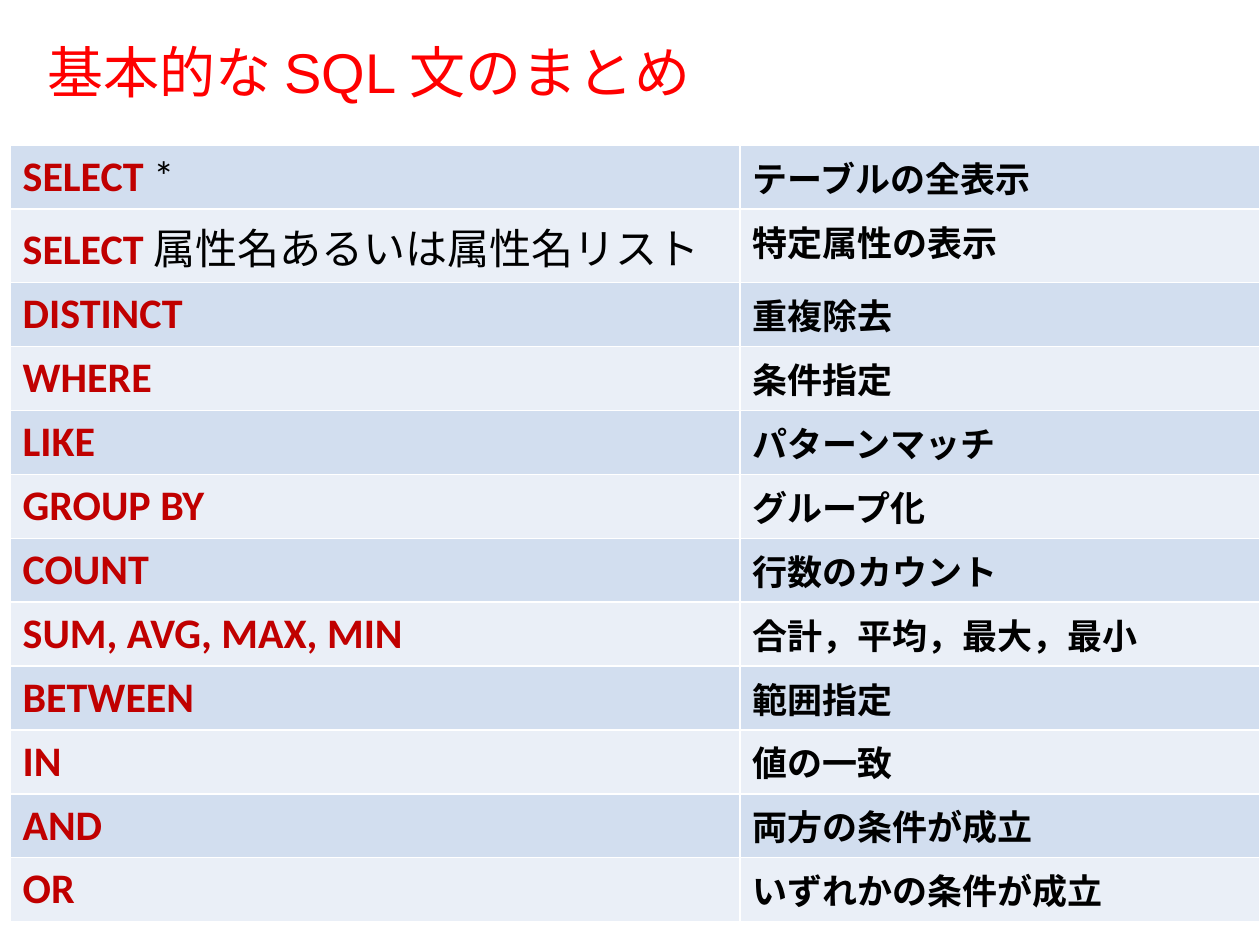
import dataclasses

import pptx
import pptx.dml.color
import pptx.enum.lang
import pptx.enum.text
import pptx.oxml
import pptx.oxml.ns
import pptx.util


@dataclasses.dataclass(frozen=True)
class Theme:
    """Colours, fonts and type sizes of the slide."""
    title: str = "FF0000"
    keyword: str = "C00000"
    text: str = "000000"
    border: str = "FFFFFF"
    bands: tuple = ("D2DEEF", "EAEFF7")
    title_font: str = "Arial"
    table_font: str = "Calibri"
    title_size: float = 32
    keyword_size: float = 24
    meaning_size: float = 20


THEME = Theme()
TITLE = "基本的な SQL 文のまとめ"
COLUMN_WIDTHS = (417, 297)
ROW_HEIGHT = 36.5
STATEMENTS = (
    ("SELECT", " *", "テーブルの全表示"),
    ("SELECT ", "属性名あるいは属性名リスト", "特定属性の表示"),
    ("DISTINCT", "", "重複除去"),
    ("WHERE", "", "条件指定"),
    ("LIKE", "", "パターンマッチ"),
    ("GROUP BY", "", "グループ化"),
    ("COUNT", "", "行数のカウント"),
    ("SUM, AVG, MAX, MIN", "", "合計，平均，最大，最小"),
    ("BETWEEN", "", "範囲指定"),
    ("IN", "", "値の一致"),
    ("AND", "", "両方の条件が成立"),
    ("OR", "", "いずれかの条件が成立"),
)


def set_values(target, values):
    """Set each named attribute on the target."""
    for name, value in values.items():
        setattr(target, name, value)


def add_span(para, text, font, size, color, bold=False):
    """Append one formatted run to a paragraph."""
    span = para.add_run()
    span.text = text
    set_values(span.font, {
        "name": font,
        "size": pptx.util.Pt(size),
        "bold": bold,
        "language_id": pptx.enum.lang.MSO_LANGUAGE_ID.JAPANESE,
    })
    span.font.color.rgb = pptx.dml.color.RGBColor.from_string(color)


def add_title(page):
    """Add the slide heading."""
    box = page.shapes.add_textbox(*map(pptx.util.Pt, (20, 11, 666, 64)))
    set_values(box.text_frame, {
        "word_wrap": True,
        "vertical_anchor": pptx.enum.text.MSO_ANCHOR.MIDDLE,
    })
    para = box.text_frame.paragraphs[0]
    para.line_spacing = 0.9
    add_span(para, TITLE, THEME.title_font, THEME.title_size, THEME.title)


def paint_cell(cell, color):
    """Give a cell thin borders and a solid fill."""
    properties = cell._tc.get_or_add_tcPr()
    for side in ("lnL", "lnR", "lnT", "lnB"):
        properties.append(pptx.oxml.parse_xml(
            f'<a:{side} {pptx.oxml.ns.nsdecls("a")} w="{pptx.util.Pt(1)}">'
            f'<a:solidFill><a:srgbClr val="{THEME.border}"/></a:solidFill>'
            f'</a:{side}>'))
    cell.fill.solid()
    cell.fill.fore_color.rgb = pptx.dml.color.RGBColor.from_string(color)


def fill_row(row, keyword, argument, meaning, band):
    """Write one statement and its meaning into a table row."""
    for cell in row.cells:
        paint_cell(cell, band)
    statement, description = (cell.text_frame.paragraphs[0] for cell in row.cells)
    add_span(statement, keyword, THEME.table_font, THEME.keyword_size, THEME.keyword, True)
    if argument:
        add_span(statement, argument, THEME.table_font, THEME.keyword_size, THEME.text)
    add_span(description, meaning, THEME.table_font, THEME.meaning_size, THEME.text, True)


def add_statement_table(page):
    """Add the table of SQL statements."""
    count = len(STATEMENTS)
    frame = page.shapes.add_table(
        count, len(COLUMN_WIDTHS),
        *map(pptx.util.Pt, (5.75, 83, sum(COLUMN_WIDTHS), count * ROW_HEIGHT)))
    table = frame.table
    set_values(table, {"first_row": False, "horz_banding": False})
    for column, width in zip(table.columns, COLUMN_WIDTHS):
        column.width = pptx.util.Pt(width)
    for index, (row, statement) in enumerate(zip(table.rows, STATEMENTS)):
        row.height = pptx.util.Pt(ROW_HEIGHT)
        fill_row(row, *statement, THEME.bands[index % 2])


def main():
    """Build and save the slide."""
    deck = pptx.Presentation()
    set_values(deck, {
        "slide_width": pptx.util.Pt(720),
        "slide_height": pptx.util.Pt(540),
    })
    page = deck.slides.add_slide(deck.slide_layouts[6])
    add_statement_table(page)
    add_title(page)
    deck.save("out.pptx")


if __name__ == "__main__":
    main()
